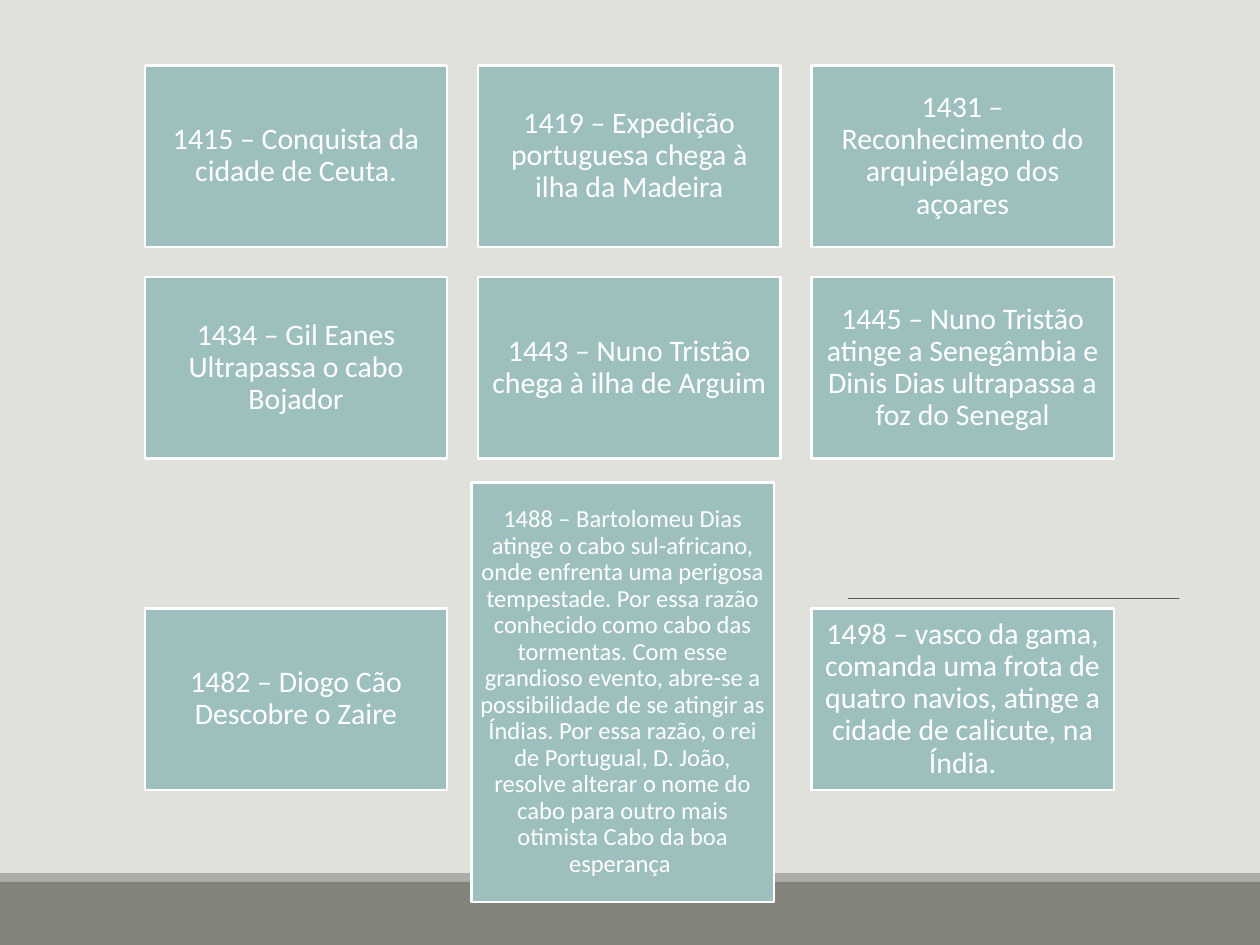
"""Build a timeline slide of the Portuguese voyages of discovery."""
from dataclasses import dataclass

import lxml.etree
import pptx
import pptx.dml.color
import pptx.enum.shapes
import pptx.enum.text
import pptx.oxml.ns
import pptx.slide
import pptx.util


@dataclass(frozen=True)
class Theme:
    paper: str = "E1E1DB"
    strip: str = "ACADA8"
    floor: str = "82847C"
    rule: str = "514949"
    card: str = "9DBFBE"
    light: str = "FFFFFF"
    font: str = "Calibri"
    body_size: float = 17
    small_size: float = 14
    card_line: float = 1.25
    rule_line: float = 0.5


@dataclass(frozen=True)
class Grid:
    left: float = 1.15
    top: float = 0.52
    column_step: float = 2.645
    row_step: float = 1.68
    card_width: float = 2.4
    card_height: float = 1.44


@dataclass(frozen=True)
class Event:
    text: str
    column: float
    row: float
    height: float = 1
    size: float = Theme.body_size
    inset: float = 0.07


@dataclass(frozen=True)
class Band:
    top: float
    height: float
    color: str


THEME = Theme()
GRID = Grid()
WIDTH, HEIGHT = 10, 7.5
LAST_ROW = 2.565

BANDS = [
    Band(0, 6.93, THEME.paper),
    Band(6.93, 0.07, THEME.strip),
    Band(7, 0.5, THEME.floor),
]

EVENTS = [
    Event("1415 – Conquista da cidade de Ceuta.", 0, 0),
    Event("1419 – Expedição portuguesa chega à ilha da Madeira", 1, 0),
    Event("1431 – Reconhecimento do arquipélago dos açoares", 2, 0),
    Event("1434 – Gil Eanes Ultrapassa o cabo Bojador", 0, 1),
    Event("1443 – Nuno Tristão chega à ilha de Arguim", 1, 1),
    Event("1445 – Nuno Tristão atinge a Senegâmbia e Dinis Dias ultrapassa "
          "a foz do Senegal", 2, 1),
    Event("1482 – Diogo Cão Descobre o Zaire", 0, LAST_ROW),
    Event("1488 – Bartolomeu Dias atinge o cabo sul-africano, onde enfrenta uma "
          "perigosa tempestade. Por essa razão conhecido como cabo das tormentas. "
          "Com esse grandioso evento, abre-se a possibilidade de se atingir as "
          "Índias. Por essa razão, o rei de Portugual, D. João, resolve alterar o "
          "nome do cabo para outro mais otimista Cabo da boa esperança ",
          0.98, 1.97, 2.31, THEME.small_size, 0.06),
    Event("1498 – vasco da gama, comanda uma frota de quatro navios, atinge a "
          "cidade de calicute, na Índia.", 2, LAST_ROW),
]


def rgb(color: str) -> pptx.dml.color.RGBColor:
    """Turn a hex string into a colour."""
    return pptx.dml.color.RGBColor.from_string(color)


def add_block(slide: pptx.slide.Slide, left: float, top: float,
              width: float, height: float, color: str):
    """Add a flat rectangle without outline or shadow."""
    block = slide.shapes.add_shape(
        pptx.enum.shapes.MSO_SHAPE.RECTANGLE,
        *map(pptx.util.Inches, (left, top, width, height)))
    block.shadow.inherit = False
    block.fill.solid()
    block.fill.fore_color.rgb = rgb(color)
    block.line.fill.background()
    return block


def add_rule(slide: pptx.slide.Slide, left: float, right: float, y: float) -> None:
    """Add the thin, slightly transparent horizontal rule."""
    rule = slide.shapes.add_connector(
        pptx.enum.shapes.MSO_CONNECTOR.STRAIGHT,
        *map(pptx.util.Inches, (left, y, right, y)))
    rule.line.width = pptx.util.Pt(THEME.rule_line)
    rule.line.color.rgb = rgb(THEME.rule)
    properties = rule.element.spPr
    qn = pptx.oxml.ns.qn
    tint = properties.find(".//" + qn("a:srgbClr"))
    lxml.etree.SubElement(tint, qn("a:alpha"), val="90000")
    lxml.etree.SubElement(properties, qn("a:effectLst"))


def add_event(slide: pptx.slide.Slide, event: Event) -> None:
    """Add one event card at its grid position."""
    card = add_block(slide, GRID.left + event.column * GRID.column_step,
                     GRID.top + event.row * GRID.row_step,
                     GRID.card_width, GRID.card_height * event.height, THEME.card)
    card.line.color.rgb = rgb(THEME.light)
    card.line.width = pptx.util.Pt(THEME.card_line)
    frame = card.text_frame
    frame.word_wrap = True
    frame.vertical_anchor = pptx.enum.text.MSO_ANCHOR.MIDDLE
    inset = pptx.util.Inches(event.inset)
    frame.margin_left = frame.margin_right = inset
    frame.margin_top = frame.margin_bottom = inset
    paragraph = frame.paragraphs[0]
    paragraph.alignment = pptx.enum.text.PP_ALIGN.CENTER
    paragraph.line_spacing = 0.9
    run = paragraph.add_run()
    run.text = event.text
    run.font.name = THEME.font
    run.font.size = pptx.util.Pt(event.size)
    run.font.color.rgb = rgb(THEME.light)


def main() -> None:
    """Build and save the presentation."""
    deck = pptx.Presentation()
    deck.slide_width = pptx.util.Inches(WIDTH)
    deck.slide_height = pptx.util.Inches(HEIGHT)
    slide = deck.slides.add_slide(deck.slide_layouts.get_by_name("Blank"))
    slide.background.fill.solid()
    slide.background.fill.fore_color.rgb = rgb(THEME.paper)
    paper, *footer = BANDS
    add_block(slide, 0, paper.top, WIDTH, paper.height, paper.color)
    add_rule(slide, 6.73, 9.36, 4.75)
    for band in footer:
        add_block(slide, 0, band.top, WIDTH, band.height, band.color)
    for event in EVENTS:
        add_event(slide, event)
    deck.save("out.pptx")


if __name__ == "__main__":
    main()
